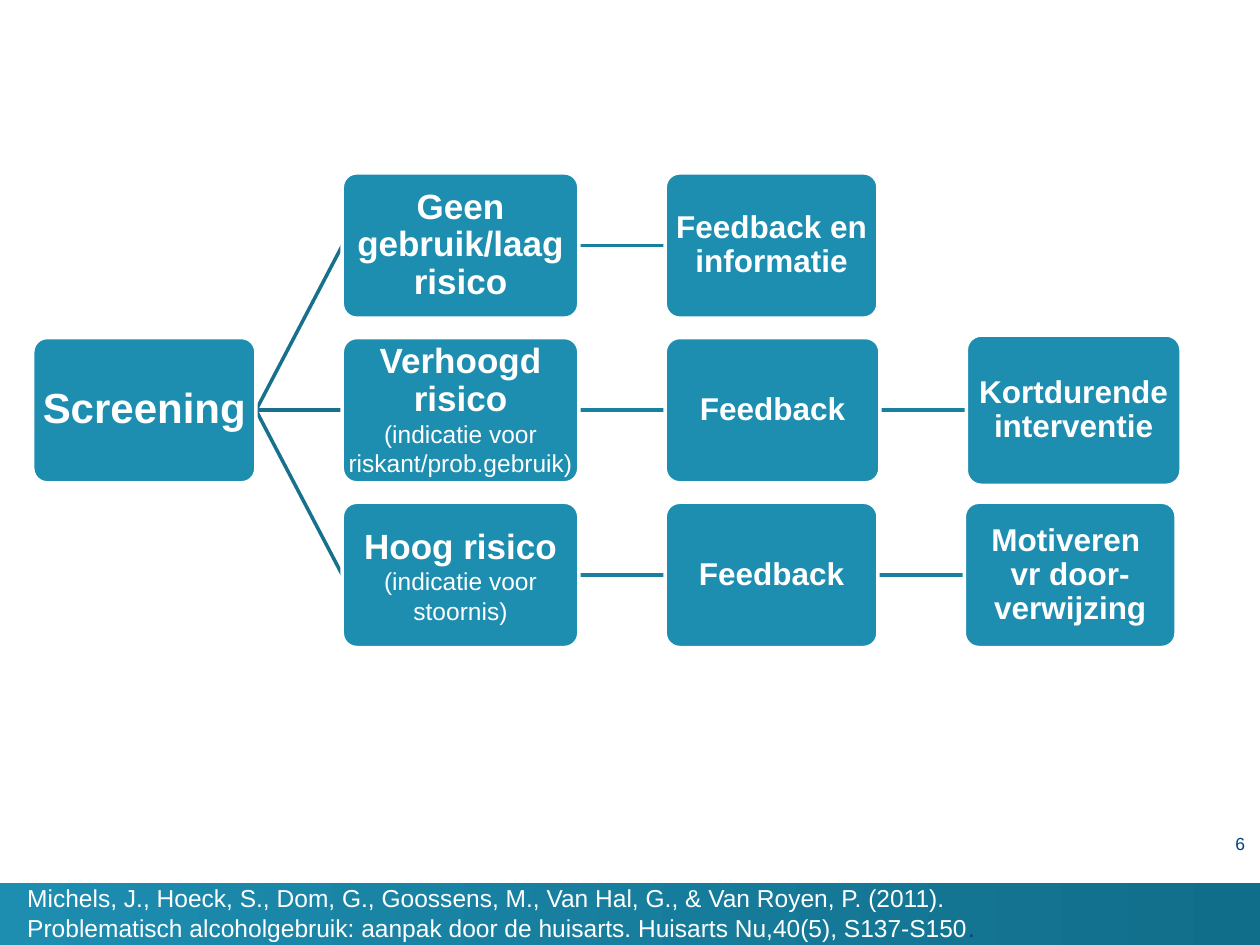
"""Build the screening flow slide with its source line."""
from lxml.etree import SubElement
from pptx import Presentation
from pptx.dml.color import RGBColor as Rgb
from pptx.enum.shapes import MSO_CONNECTOR as Link, MSO_SHAPE as Form
from pptx.enum.text import MSO_ANCHOR as Anchor, PP_ALIGN as Align
from pptx.oxml.ns import qn
from pptx.util import Cm, Pt

THEME = {
    "font": "Arial",
    "fill": "1D8DB0",
    "dark": "116E8A",
    "white": "FFFFFF",
    "navy": "00407A",
    "fork": "17718D",
    "step": "1A80A0",
    "line": 2,
    "root": {"size": 24, "bold": True, "lead": 0.9},
    "risk": {"size": 20, "bold": True, "lead": 0.9},
    "wide": {"size": 20, "bold": True},
    "act": {"size": 18, "bold": True, "lead": 0.9},
    "note": {"size": 14},
    "tail": {"size": 14, "fresh": False},
    "page": {"size": 10, "color": "00407A", "align": Align.RIGHT},
    "cite": {"size": 14, "align": Align.LEFT},
}


def write(frame, text, size=14, bold=False, color=THEME["white"],
          align=Align.CENTER, lead=1.0, fresh=True):
    para = frame.paragraphs[-1]
    if fresh and para.runs:
        para = frame.add_paragraph()
    if fresh:
        para.alignment = align
        para.line_spacing = lead
    run = para.add_run()
    run.text = text
    run.font.name = THEME["font"]
    run.font.size = Pt(size)
    run.font.bold = bold
    run.font.color.rgb = Rgb.from_string(color)


def add_box(left, mid, width, height, parts):
    box = shapes.add_shape(Form.ROUNDED_RECTANGLE, Cm(left),
                           Cm(mid - height / 2), Cm(width), Cm(height))
    box.adjustments[0] = 0.1
    box.shadow.inherit = False
    box.fill.solid()
    box.fill.fore_color.rgb = Rgb.from_string(THEME["fill"])
    box.line.color.rgb = Rgb.from_string(THEME["white"])
    box.line.width = Pt(THEME["line"])
    frame = box.text_frame
    frame.word_wrap = True
    frame.vertical_anchor = Anchor.MIDDLE
    frame.margin_left = frame.margin_right = Cm(0.03)
    frame.margin_top = frame.margin_bottom = Cm(0.03)
    for text, style in parts:
        write(frame, text, **THEME[style])
    return box


deck = Presentation()
deck.slide_width, deck.slide_height = Cm(25.4), Cm(19.05)
slide = deck.slides.add_slide(deck.slide_layouts[6])
shapes = slide.shapes

bar = shapes.add_shape(Form.RECTANGLE, 0, Cm(17.8), Cm(25.4), Cm(1.25))
bar.shadow.inherit = False
bar.line.fill.background()
bar.fill.gradient()
bar.fill.gradient_angle = 0
for stop, tone in zip(bar.fill.gradient_stops, ("fill", "dark")):
    stop.color.rgb = Rgb.from_string(THEME[tone])

page = shapes.add_textbox(Cm(22.5), Cm(16.79), Cm(2.6), Cm(0.79)).text_frame
page.word_wrap = True
page.margin_left = page.margin_right = page.margin_top = page.margin_bottom = 0
write(page, "6", **THEME["page"])

GAP, PITCH, MID, TALL = 1.74, 3.32, 8.27, 2.93
EDGE, ROOT = 0.66, 4.5
ROWS = [
    [(4.77, TALL, [("Geen gebruik/laag risico", "risk")]),
     (4.29, TALL, [("Feedback en informatie", "act")])],
    [(4.77, TALL, [("Verhoogd risico", "risk"),
                   ("(indicatie voor riskant/prob.gebruik)", "note")]),
     (4.33, TALL, [("Feedback", "act")]),
     (4.33, 3.03, [("Kortdurende interventie", "act")])],
    [(4.77, TALL, [("Hoog risico ", "wide"),
                   ("(indicatie voor stoornis)", "tail")]),
     (4.29, TALL, [("Feedback", "act")]),
     (4.27, TALL, [("Motiveren ", "act"), ("vr door-verwijzing", "act")])],
]

root = add_box(EDGE, MID, ROOT, TALL, [("Screening", "root")])
pairs = []
for row, items in enumerate(ROWS):
    left, last = EDGE + ROOT + GAP, root
    for width, height, parts in items:
        box = add_box(left, MID + (row - 1) * PITCH, width, height, parts)
        pairs.append((last, box))
        left, last = left + width + GAP, box

for start, end in pairs:
    link = shapes.add_connector(Link.STRAIGHT, 0, 0, 0, 0)
    link.begin_connect(start, 3)
    link.end_connect(end, 1)
    tone = "fork" if start is root else "step"
    link.line.color.rgb = Rgb.from_string(THEME[tone])
    link.line.width = Pt(THEME["line"])
    SubElement(link.element.spPr, qn("a:effectLst"))
    shapes.element.insert(2, link.element)

cite = shapes.add_textbox(Cm(0.3), Cm(17.68), Cm(24), Cm(1.45)).text_frame
cite.word_wrap = True
for text in (
    "Michels, J., Hoeck, S., Dom, G., Goossens, M., Van Hal, G., & Van Royen, P. (2011).",
    "Problematisch alcoholgebruik: aanpak door de huisarts. Huisarts Nu,40(5), S137-S150",
):
    write(cite, text, **THEME["cite"])
write(cite, ".", color=THEME["navy"], **THEME["tail"])

deck.save("out.pptx")
